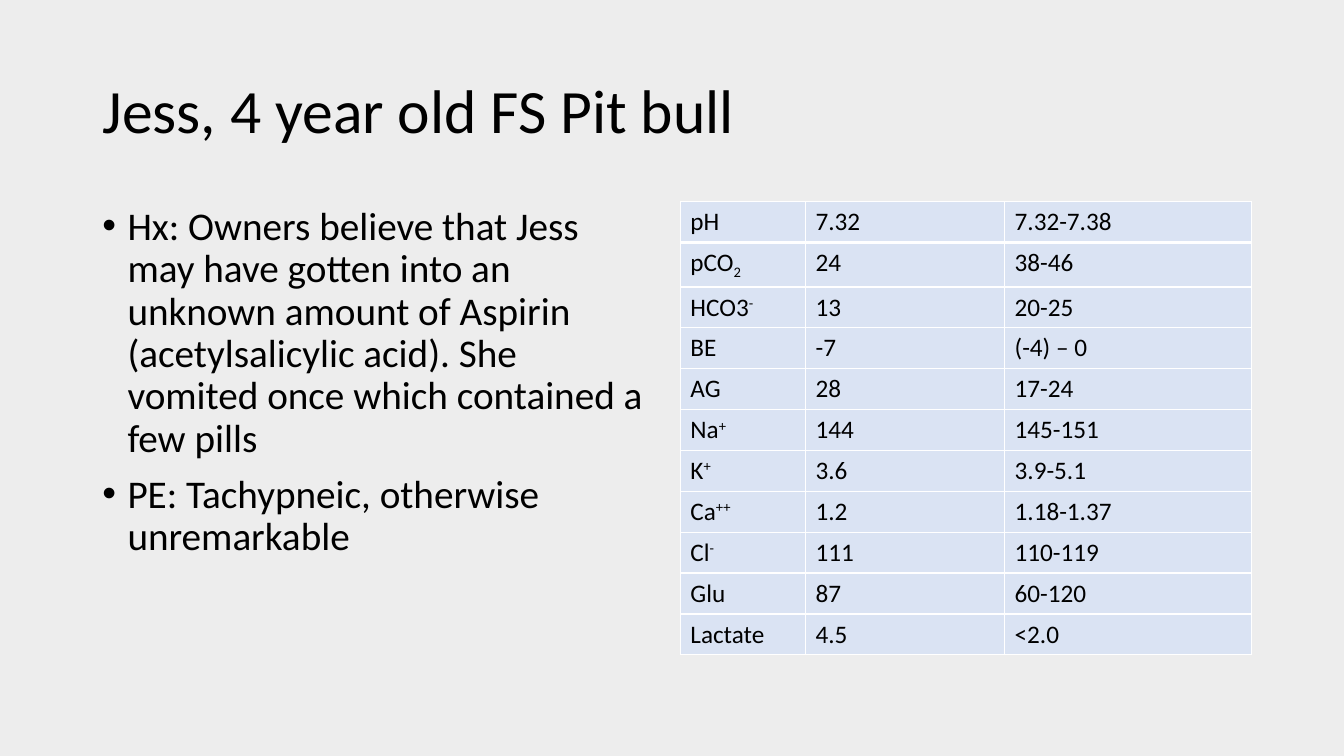
from dataclasses import dataclass
from typing import NamedTuple

import pptx
import pptx.dml.color
import pptx.enum.text
import pptx.oxml
import pptx.oxml.ns
import pptx.util

GRID_COLUMNS, GRID_ROWS = 160, 90
GRID_UNIT = pptx.util.Pt(6)


@dataclass(frozen=True)
class Theme:
    font: str = "Calibri"
    background: str = "EDEDED"
    text: str = "000000"
    cell: str = "DAE3F3"
    border: str = "FFFFFF"
    title_size: int = 44
    history_size: int = 28
    lab_size: int = 18
    border_width: float = 1
    first_rule_width: float = 3


class Region(NamedTuple):
    """A rectangle in grid units."""
    column: float
    row: float
    columns: float
    rows: float


class LabResult(NamedTuple):
    analyte: str
    value: str
    reference: str
    subscript: str = ""
    superscript: str = ""


THEME = Theme()
TITLE_REGION = Region(11, 4.8, 138, 17.4)
HISTORY_REGION = Region(11, 24, 68, 57.1)
LAB_ROW = 4.87
LAB_COLUMNS = (14.9, 23.7, 29.4)

TITLE = "Jess, 4 year old FS Pit bull"
HISTORY = (
    "Hx: Owners believe that Jess may have gotten into an unknown amount of "
    "Aspirin (acetylsalicylic acid). She vomited once which contained a few pills",
    "PE: Tachypneic, otherwise unremarkable",
)
LAB_RESULTS = (
    LabResult("pH", "7.32", "7.32-7.38"),
    LabResult("pCO", "24", "38-46", subscript="2"),
    LabResult("HCO3", "13", "20-25", superscript="-"),
    LabResult("BE", "-7", "(-4) – 0"),
    LabResult("AG", "28", "17-24"),
    LabResult("Na", "144", "145-151", superscript="+"),
    LabResult("K", "3.6", "3.9-5.1", superscript="+"),
    LabResult("Ca", "1.2", "1.18-1.37", superscript="++"),
    LabResult("Cl", "111", "110-119", superscript="-"),
    LabResult("Glu", "87", "60-120"),
    LabResult("Lactate", "4.5", "<2.0"),
)
LAB_REGION = Region(81, 24, sum(LAB_COLUMNS), LAB_ROW * len(LAB_RESULTS))


def grid(units: float) -> pptx.util.Emu:
    return pptx.util.Emu(round(units * GRID_UNIT))


def rgb(code: str) -> pptx.dml.color.RGBColor:
    return pptx.dml.color.RGBColor.from_string(code)


def style_paragraph(paragraph, size: int) -> None:
    paragraph.font.name = THEME.font
    paragraph.font.size = pptx.util.Pt(size)
    paragraph.font.color.rgb = rgb(THEME.text)


def add_bullet(paragraph) -> None:
    properties = paragraph._p.get_or_add_pPr()
    indent = pptx.util.Inches(0.25)
    properties.set("marL", str(indent))
    properties.set("indent", str(-indent))
    namespace = pptx.oxml.ns.nsdecls("a")
    bullet_font = pptx.oxml.parse_xml(f'<a:buFont {namespace} typeface="Arial"/>')
    bullet = pptx.oxml.parse_xml(f'<a:buChar {namespace} char="•"/>')
    properties.find(pptx.oxml.ns.qn("a:defRPr")).addprevious(bullet_font)
    bullet_font.addnext(bullet)


def add_borders(cell, top: float, bottom: float) -> None:
    properties = cell._tc.get_or_add_tcPr()
    side = THEME.border_width
    for edge, width in (("L", side), ("R", side), ("T", top), ("B", bottom)):
        properties.append(pptx.oxml.parse_xml(
            f'<a:ln{edge} {pptx.oxml.ns.nsdecls("a")} w="{pptx.util.Pt(width)}">'
            f'<a:solidFill><a:srgbClr val="{THEME.border}"/></a:solidFill>'
            f'</a:ln{edge}>'))


def add_script(paragraph, text: str, baseline: int) -> None:
    """Add a raised or lowered run; baseline is in thousandths of a percent."""
    if text:
        run = paragraph.add_run()
        run.text = text
        run._r.get_or_add_rPr().set("baseline", str(baseline))


def write_title(slide) -> None:
    title = slide.shapes.title
    title.left, title.top, title.width, title.height = map(grid, TITLE_REGION)
    frame = title.text_frame
    frame.text = TITLE
    frame.word_wrap = True
    frame.vertical_anchor = pptx.enum.text.MSO_ANCHOR.MIDDLE
    heading = frame.paragraphs[0]
    heading.alignment = pptx.enum.text.PP_ALIGN.LEFT
    heading.line_spacing = 0.9
    style_paragraph(heading, THEME.title_size)


def write_history(slide) -> None:
    frame = slide.shapes.add_textbox(*map(grid, HISTORY_REGION)).text_frame
    frame.word_wrap = True
    frame.text = "\n".join(HISTORY)
    for finding in frame.paragraphs:
        finding.line_spacing = 0.9
        finding.space_before = pptx.util.Pt(10)
        style_paragraph(finding, THEME.history_size)
        add_bullet(finding)


def write_lab_table(slide) -> None:
    labs = slide.shapes.add_table(
        len(LAB_RESULTS), len(LAB_COLUMNS), *map(grid, LAB_REGION)).table
    labs.first_row = labs.horz_banding = False
    for column, width in zip(labs.columns, LAB_COLUMNS):
        column.width = grid(width)
    rules = [THEME.border_width] * (len(LAB_RESULTS) + 1)
    rules[1] = THEME.first_rule_width
    for index, (row, result) in enumerate(zip(labs.rows, LAB_RESULTS)):
        row.height = grid(LAB_ROW)
        for cell, text in zip(row.cells, result):
            cell.text = text
            style_paragraph(cell.text_frame.paragraphs[0], THEME.lab_size)
            add_borders(cell, rules[index], rules[index + 1])
            cell.fill.solid()
            cell.fill.fore_color.rgb = rgb(THEME.cell)
        analyte = row.cells[0].text_frame.paragraphs[0]
        add_script(analyte, result.subscript, -25000)
        add_script(analyte, result.superscript, 30000)


def main() -> None:
    deck = pptx.Presentation()
    deck.slide_width, deck.slide_height = grid(GRID_COLUMNS), grid(GRID_ROWS)
    slide = deck.slides.add_slide(deck.slide_layouts.get_by_name("Title Only"))
    slide.background.fill.solid()
    slide.background.fill.fore_color.rgb = rgb(THEME.background)
    write_title(slide)
    write_history(slide)
    write_lab_table(slide)
    deck.save("out.pptx")


if __name__ == "__main__":
    main()
